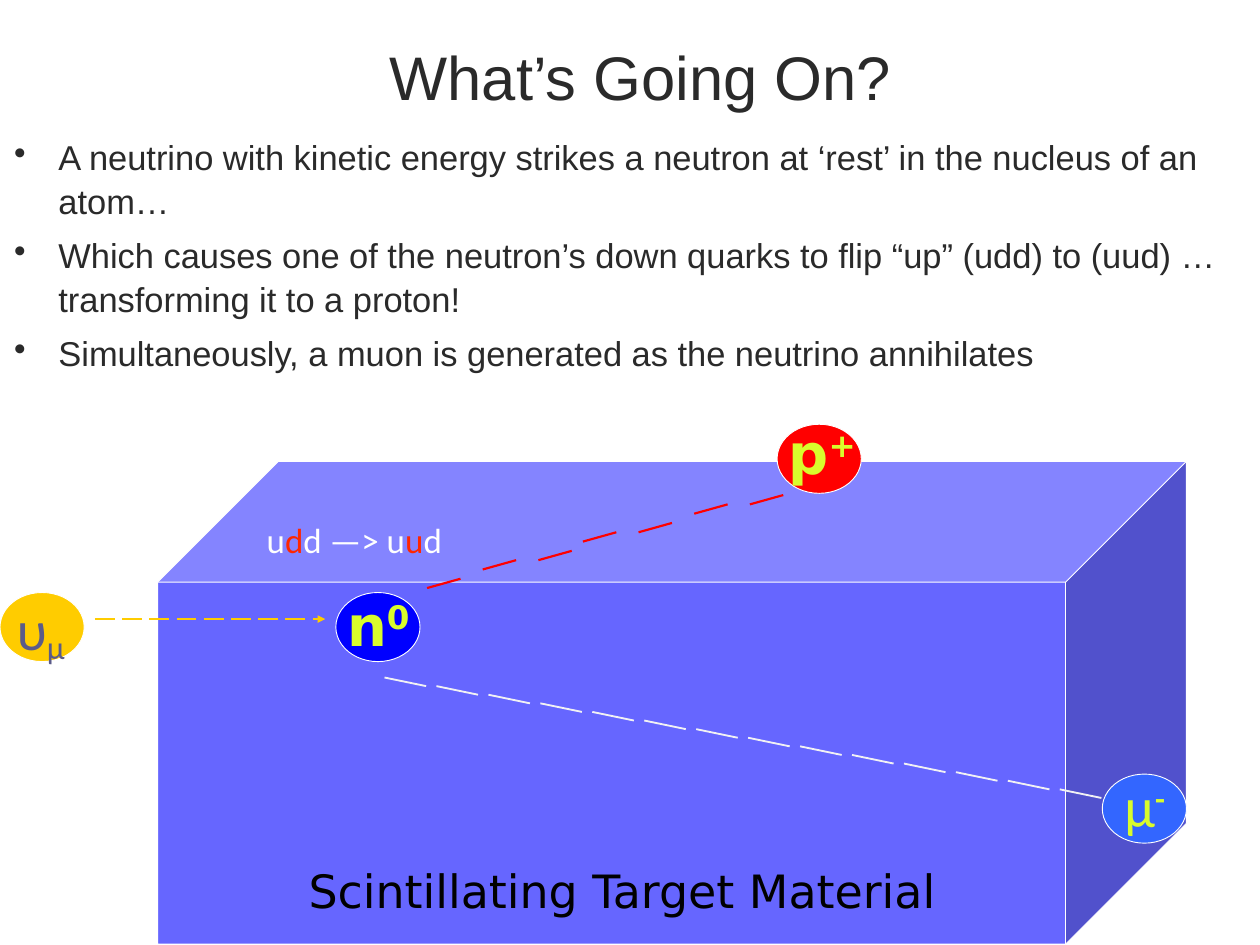
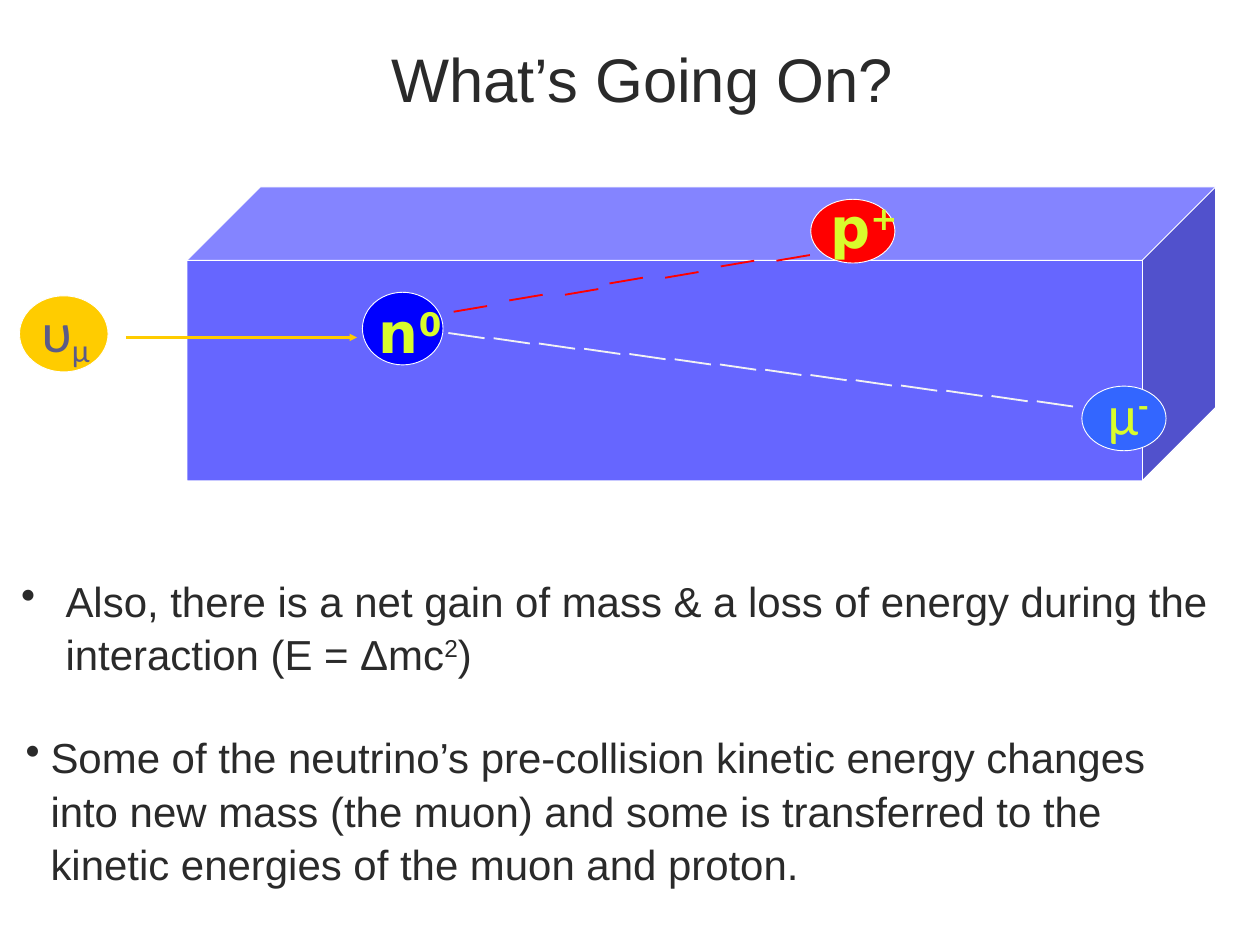
from lxml import etree
from pptx import Presentation
from pptx.dml.color import RGBColor
from pptx.enum.dml import MSO_LINE
from pptx.enum.shapes import MSO_CONNECTOR, MSO_SHAPE
from pptx.enum.text import MSO_ANCHOR, PP_ALIGN
from pptx.oxml.ns import qn
from pptx.util import Inches, Pt

CENTER, LEFT = PP_ALIGN.CENTER, PP_ALIGN.LEFT
TOP, MIDDLE, BOTTOM = MSO_ANCHOR.TOP, MSO_ANCHOR.MIDDLE, MSO_ANCHOR.BOTTOM
CUBE, OVAL = MSO_SHAPE.CUBE, MSO_SHAPE.OVAL
STRAIGHT, LONG_DASH = MSO_CONNECTOR.STRAIGHT, MSO_LINE.LONG_DASH

WIDTH, HEIGHT = 14.22, 10.67

THEME = {
    "ink": "2A2A2A", "black": "000000", "white": "FFFFFF",
    "target": "6666FF", "symbol": "D9FC2C", "neutrino_symbol": "5B5B89",
    "proton": "FF0000", "muon": "3366FF", "neutrino": "FFCC00",
    "neutron": "0000FF", "muon_track": "F1F1F4", "flipped": "FF2600",
    "sans": "Arial", "label": "DejaVu Sans", "light": "Calibri",
    "title_size": 50, "symbol_size": 45.5, "caption_size": 37.3,
    "quark_size": 28.4, "line_spacing": 1.06, "outline": 0.75,
}

# ---- Content ----
TITLE = "What’s Going On?"

# Runs are (text, format changes); baseline is in percent
SYMBOLS = {
    "proton": [("p", {"bold": True}), ("+", {"bold": True, "baseline": 31})],
    "muon": [("μ", {"font": "light"}),
             ("-", {"font": "light", "bold": True, "baseline": 31})],
    "neutrino": [("υ", {"font": "light", "color": "neutrino_symbol"}),
                 ("μ", {"font": "light", "color": "neutrino_symbol", "baseline": -17})],
    "neutron": [("n", {"bold": True}), ("0", {"bold": True, "baseline": 31})],
}
FLIPPED = {"color": "flipped"}
QUARK_FLIP = [("u", {}), ("d", FLIPPED), ("d —> u", {}), ("u", FLIPPED), ("d", {})]

# Tracks: dash starts and dash length (x, y), on a grid of units (x, y)
PROTON_TRACK = {
    "starts": [(0, 0), (5, 2), (10, 3), (14, 5), (19, 6), (24, 8), (29, 9)],
    "dash": (3, 1), "units": (32, 10),
}
MUON_TRACK = {
    "starts": [(5 * k, k) for k in range(14)],
    "dash": (4, 1), "units": (69, 14),
}

SLIDES = [
    {
        "title_at": (0.83, 0.23),
        "target": (1.78, 5.21, 11.61, 5.45),
        # particle: (circle box, symbol box)
        "particles": {
            "proton": ((8.77, 4.79, 0.95, 0.78), (8.8, 4.66, 0.96, 0.91)),
            "muon": ((12.44, 8.74, 0.95, 0.78), (12.61, 8.64, 0.62, 0.91)),
            "neutrino": ((0, 6.69, 0.95, 0.78), (0.1, 6.64, 0.72, 0.91)),
            "neutron": ((3.79, 6.69, 0.95, 0.78), (3.82, 6.6, 0.9, 0.91)),
        },
        "proton_path": ((4.82, 6.64), (8.84, 5.59), 1.75),
        "muon_path": ((4.34, 7.65), (12.43, 9.01), 1.5),
        "beam": ((1.07, 6.99), (3.67, 6.99), LONG_DASH),
        "caption": ("Scintillating Target Material", (2.61, 9.73, 8.83, 0.64)),
        "quarks_at": (2.94, 5.81, 2.61, 0.58),
        "bullets": [
            {"at": (0.16, 1.51, 14, 2.8), "indent": 0.5, "size": 28, "gap": 8.5,
             "items": [
                 [("A neutrino with kinetic energy strikes a neutron at ‘rest’ "
                   "in the nucleus of an atom…", {})],
                 [("Which causes one of the neutron’s down quarks to flip “up” "
                   "(udd) to (uud) … transforming it to a proton!", {})],
                 [("Simultaneously, a muon is generated as the neutrino "
                   "annihilates", {})],
             ]},
        ],
    },
    {
        "title_at": (0.85, 0.26),
        "target": (2.11, 2.11, 11.61, 3.32),
        "particles": {
            "proton": ((9.15, 2.25, 0.95, 0.72), (9.27, 2.1, 0.96, 0.91)),
            "muon": ((12.21, 4.36, 0.95, 0.73), (12.42, 4.21, 0.62, 0.91)),
            "neutron": ((4.09, 3.3, 0.91, 0.82), (4.18, 3.29, 0.9, 0.91)),
            "neutrino": ((0.22, 3.34, 1, 0.86), (0.07, 3.28, 1.34, 0.97)),
        },
        "proton_path": ((5.12, 3.52), (9.14, 2.88), 1.5),
        "muon_path": ((5.06, 3.76), (12.11, 4.59), 1.5),
        "beam": ((1.42, 3.81), (4.03, 3.81), None),
        "bullets": [
            {"at": (0.24, 6.46, 13.9, 1.2), "indent": 0.5, "size": 34.1, "gap": 7.1,
             "items": [
                 [("Also, there is a net gain of mass & a loss of energy during "
                   "the interaction (E = Δmc", {}), ("2", {"baseline": 30}), (")", {})],
             ]},
            {"at": (0.29, 8.23, 13.49, 1.72), "indent": 0.28, "size": 34.1, "gap": 7.1,
             "items": [
                 [("Some of the neutrino’s pre-collision kinetic energy changes into "
                   "new mass (the muon) and some is transferred to the kinetic "
                   "energies of the muon and proton.", {})],
             ]},
        ],
    },
]


# ---- Helpers ----
def rgb(name):
    return RGBColor.from_string(THEME[name])


def inches(values):
    return [Inches(v) for v in values]


def add_runs(paragraph, runs, base):
    for text, changes in runs:
        style = {**base, **changes}
        run = paragraph.add_run()
        run.text = text
        formats = {"name": THEME[style["font"]], "size": Pt(style["size"]),
                   "bold": style.get("bold", False)}
        for key, value in formats.items():
            setattr(run.font, key, value)
        run.font.color.rgb = rgb(style["color"])
        if "baseline" in style:
            run._r.get_or_add_rPr().set("baseline", str(style["baseline"] * 1000))


def add_text(slide, at, paragraphs, base, align=CENTER, anchor=TOP,
             inset=(0, 0), wrap=True, indent=0, gap=0):
    frame = slide.shapes.add_textbox(*inches(at)).text_frame
    side, edge = inches(inset)
    formats = {"word_wrap": wrap, "vertical_anchor": anchor,
               "margin_left": side, "margin_right": side,
               "margin_top": edge, "margin_bottom": edge}
    for key, value in formats.items():
        setattr(frame, key, value)
    for i, runs in enumerate(paragraphs):
        paragraph = frame.add_paragraph() if i else frame.paragraphs[0]
        paragraph.alignment = align
        if indent:
            props = paragraph._p.get_or_add_pPr()
            props.set("marL", str(Inches(indent)))
            props.set("indent", str(-Inches(indent)))
            etree.SubElement(props, qn("a:buChar")).set("char", "•")
            paragraph.line_spacing = THEME["line_spacing"]
        if i:
            paragraph.space_before = Pt(gap)
        add_runs(paragraph, runs, base)


def add_solid(slide, kind, at, fill):
    solid = slide.shapes.add_shape(kind, *inches(at))
    solid.shadow.inherit = False
    solid.fill.solid()
    solid.fill.fore_color.rgb = rgb(fill)
    solid.line.color.rgb = rgb("white")
    solid.line.width = Pt(THEME["outline"])


def add_line(slide, start, end, color, width, dash=None, arrow=False):
    line = slide.shapes.add_connector(STRAIGHT, *inches((*start, *end)))
    line.line.color.rgb = rgb(color)
    line.line.width = Pt(width)
    if dash:
        line.line.dash_style = dash
    props = line._element.spPr
    if arrow:
        etree.SubElement(props.find(qn("a:ln")), qn("a:tailEnd")).set("type", "triangle")
    etree.SubElement(props, qn("a:effectLst"))


def add_track(slide, track, path_ends, color):
    start, end, width = path_ends
    unit = [(e - s) / n for s, e, n in zip(start, end, track["units"])]

    def place(steps):
        return [s + n * u for s, n, u in zip(start, steps, unit)]

    for first in track["starts"]:
        last = [f + d for f, d in zip(first, track["dash"])]
        add_line(slide, place(first), place(last), color, width)


# ---- Slide ----
def build_slide(slide, content):
    # Title
    add_text(slide, (*content["title_at"], 12.8, 1.04), [[(TITLE, {})]],
             {"font": "sans", "size": THEME["title_size"], "color": "ink"}, anchor=BOTTOM)

    # Target block and particles
    add_solid(slide, CUBE, content["target"], "target")
    symbol = {"font": "label", "size": THEME["symbol_size"], "color": "symbol"}
    for particle, (circle_at, symbol_at) in content["particles"].items():
        add_solid(slide, OVAL, circle_at, particle)
        add_text(slide, symbol_at, [SYMBOLS[particle]], symbol,
                 inset=(0.07, 0.07), wrap=False)

    # Tracks and incoming beam
    add_track(slide, PROTON_TRACK, content["proton_path"], "proton")
    add_track(slide, MUON_TRACK, content["muon_path"], "muon_track")
    start, end, dash = content["beam"]
    add_line(slide, start, end, "neutrino", 2, dash, arrow=True)

    # Labels on the target
    if "caption" in content:
        caption, caption_at = content["caption"]
        add_text(slide, caption_at, [[(caption, {})]],
                 {"font": "label", "size": THEME["caption_size"], "color": "black"},
                 anchor=MIDDLE)
    if "quarks_at" in content:
        add_text(slide, content["quarks_at"], [QUARK_FLIP],
                 {"font": "light", "size": THEME["quark_size"], "color": "white"},
                 align=LEFT, inset=(0.07, 0.05))

    # Bullets
    for group in content["bullets"]:
        add_text(slide, group["at"], group["items"],
                 {"font": "sans", "size": group["size"], "color": "ink"},
                 align=LEFT, indent=group["indent"], gap=group["gap"])


def main():
    deck = Presentation()
    deck.slide_width, deck.slide_height = inches((WIDTH, HEIGHT))
    blank = deck.slide_layouts[6]
    for content in SLIDES:
        build_slide(deck.slides.add_slide(blank), content)
    deck.save("out.pptx")


if __name__ == "__main__":
    main()
